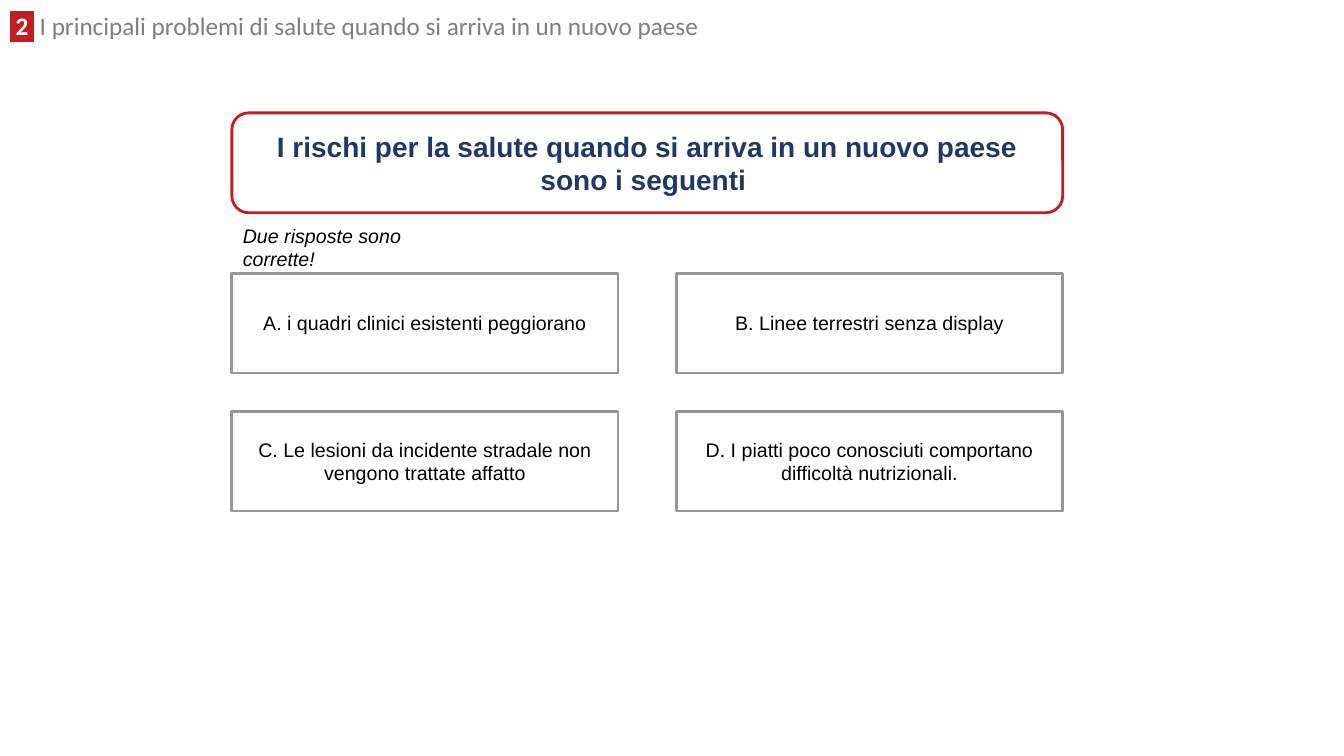
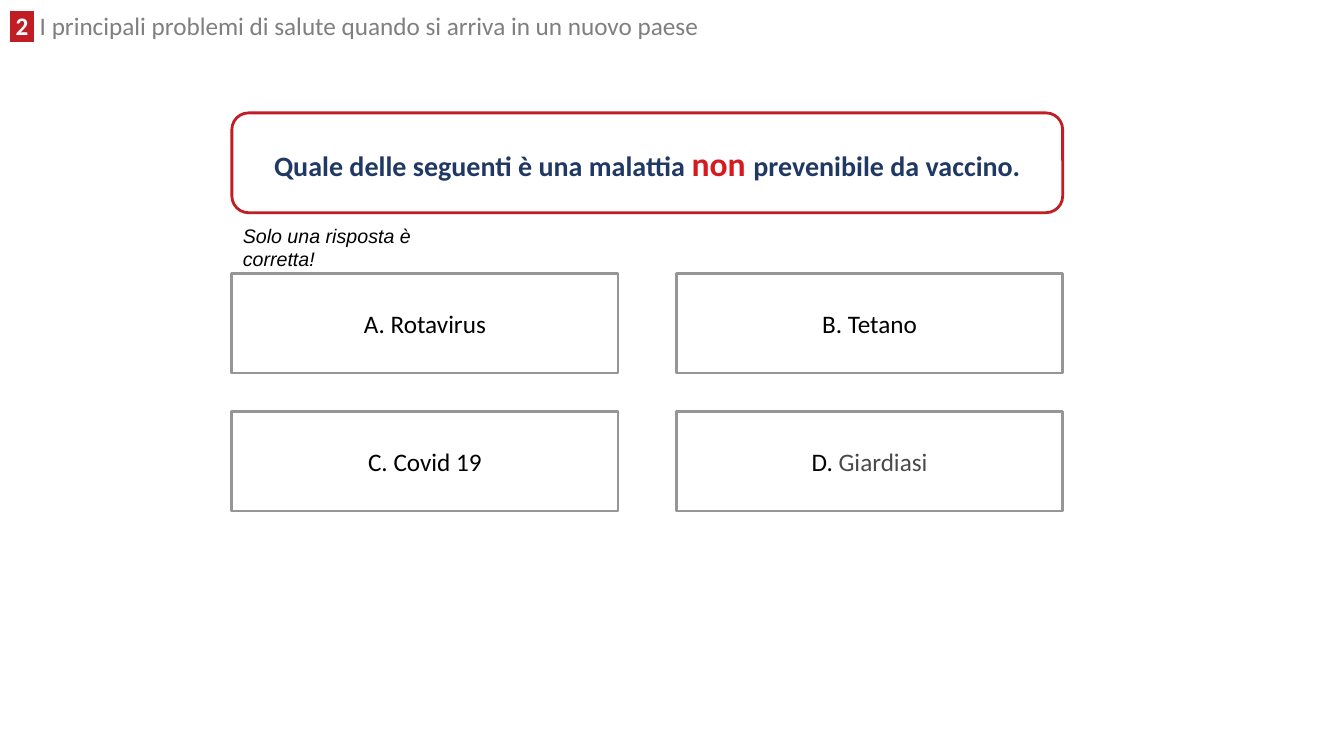
import pptx
import pptx.dml.color
import pptx.enum.shapes
import pptx.enum.text
import pptx.oxml
import pptx.oxml.ns
import pptx.util
from pptx.util import Inches

# Shared palette
RED, ACCENT_RED = "C01E24", "D71920"
NAVY, GREY, FRAME_GREY, DARK_GREY = "203864", "7F7F7F", "969696", "4A4A4A"
BLACK, WHITE = "000000", "FFFFFF"

# Shared layout, in inches
LEFT, QUESTION_TOP, QUESTION_W = 2.3, 1.12, 8.24
ANSWER_TOP, ANSWER_W, BOX_H = 2.71, 3.83, 0.99
COLUMN_STEP, ROW_STEP = QUESTION_W - ANSWER_W, 1.37

SECTION_NUMBER = " 2 "
SECTION_TITLE = " I principali problemi di salute quando si arriva in un nuovo paese"

ROUNDED = pptx.enum.shapes.MSO_SHAPE.ROUNDED_RECTANGLE
RECTANGLE = pptx.enum.shapes.MSO_SHAPE.RECTANGLE

# Each run is (text, size, colour)
QUIZ = [
    {"font": "Arial",
     "question": [("I rischi per la salute quando si arriva in un nuovo paese "
                   "sono i seguenti ", 20, NAVY)],
     "hint": "Due risposte sono corrette!", "hint_width": 2.2,
     "answers": [
         [("A. i quadri clinici esistenti peggiorano", 14, BLACK)],
         [("B. Linee terrestri senza display", 14, BLACK)],
         [("C. Le lesioni da incidente stradale non vengono trattate affatto",
           14, BLACK)],
         [("D. I piatti poco conosciuti comportano difficoltà nutrizionali.",
           14, BLACK)]]},
    {"font": "Calibri",
     "question": [("Quale delle seguenti è una malattia ", 20, NAVY),
                  ("non ", 24, ACCENT_RED),
                  ("prevenibile da vaccino.", 20, NAVY)],
     "hint": "Solo una risposta è corretta!", "hint_width": 2.36,
     "answers": [
         [("A. Rotavirus", 18, BLACK)],
         [("B. Tetano", 18, BLACK)],
         [("C. Covid 19", 18, BLACK)],
         [("D. ", 18, BLACK), ("Giardiasi", 18, DARK_GREY)]]},
]


def rgb(value):
    return pptx.dml.color.RGBColor.from_string(value)


def add_runs(p, runs, font, bold=False, italic=False):
    for text, size, color in runs:
        r = p.add_run()
        r.text = text
        r.font.name = font
        r.font.size = pptx.util.Pt(size)
        r.font.bold = bold
        r.font.italic = italic
        r.font.color.rgb = rgb(color)
    return p.runs[-1]


def highlight(r, color):
    """Put a highlight behind a run, right after its text fill."""
    mark = pptx.oxml.parse_xml(
        f'<a:highlight {pptx.oxml.ns.nsdecls("a")}>'
        f'<a:srgbClr val="{color}"/></a:highlight>')
    fill = r.font._element.find(pptx.oxml.ns.qn("a:solidFill"))
    fill.addnext(mark)


def add_label(slide, x, y, w, h):
    """Add a wrapping text box and return its first paragraph."""
    tf = slide.shapes.add_textbox(Inches(x), Inches(y), Inches(w), Inches(h)).text_frame
    tf.word_wrap = True
    tf.auto_size = pptx.enum.text.MSO_AUTO_SIZE.SHAPE_TO_FIT_TEXT
    return tf.paragraphs[0]


def add_box(slide, kind, x, y, w, line_color, runs, font, bold=False):
    sp = slide.shapes.add_shape(kind, Inches(x), Inches(y), Inches(w), Inches(BOX_H))
    sp.shadow.inherit = False
    sp.fill.solid()
    sp.fill.fore_color.rgb = rgb(WHITE)
    sp.line.color.rgb = rgb(line_color)
    sp.line.width = pptx.util.Pt(2)
    tf = sp.text_frame
    tf.word_wrap = True
    tf.vertical_anchor = pptx.enum.text.MSO_ANCHOR.MIDDLE
    p = tf.paragraphs[0]
    p.alignment = pptx.enum.text.PP_ALIGN.CENTER
    add_runs(p, runs, font, bold)


def add_section_title(slide):
    p = add_label(slide, 0, 0.11, 8.54, 0.34)
    p.line_spacing = 0.8
    number = add_runs(p, [(SECTION_NUMBER, 18, WHITE)], "Calibri", bold=True)
    highlight(number, RED)
    add_runs(p, [(SECTION_TITLE, 18, GREY)], "Calibri")


def add_quiz_slide(prs, quiz):
    slide = prs.slides.add_slide(prs.slide_layouts[6])
    add_section_title(slide)

    # Question
    add_box(slide, ROUNDED, LEFT, QUESTION_TOP, QUESTION_W, RED,
            quiz["question"], quiz["font"], bold=True)

    # Answers in a grid of two columns
    for i, runs in enumerate(quiz["answers"]):
        row, col = divmod(i, 2)
        add_box(slide, RECTANGLE, LEFT + col * COLUMN_STEP,
                ANSWER_TOP + row * ROW_STEP, ANSWER_W, FRAME_GREY,
                runs, quiz["font"])

    # Hint on the number of correct answers
    p = add_label(slide, 2.31, 2.17, quiz["hint_width"], 0.34)
    add_runs(p, [(quiz["hint"], 14, BLACK)], "Arial", italic=True)


def main():
    prs = pptx.Presentation()
    prs.slide_width = Inches(13.33)
    prs.slide_height = Inches(7.5)
    for quiz in QUIZ:
        add_quiz_slide(prs, quiz)
    prs.save("out.pptx")


if __name__ == "__main__":
    main()
